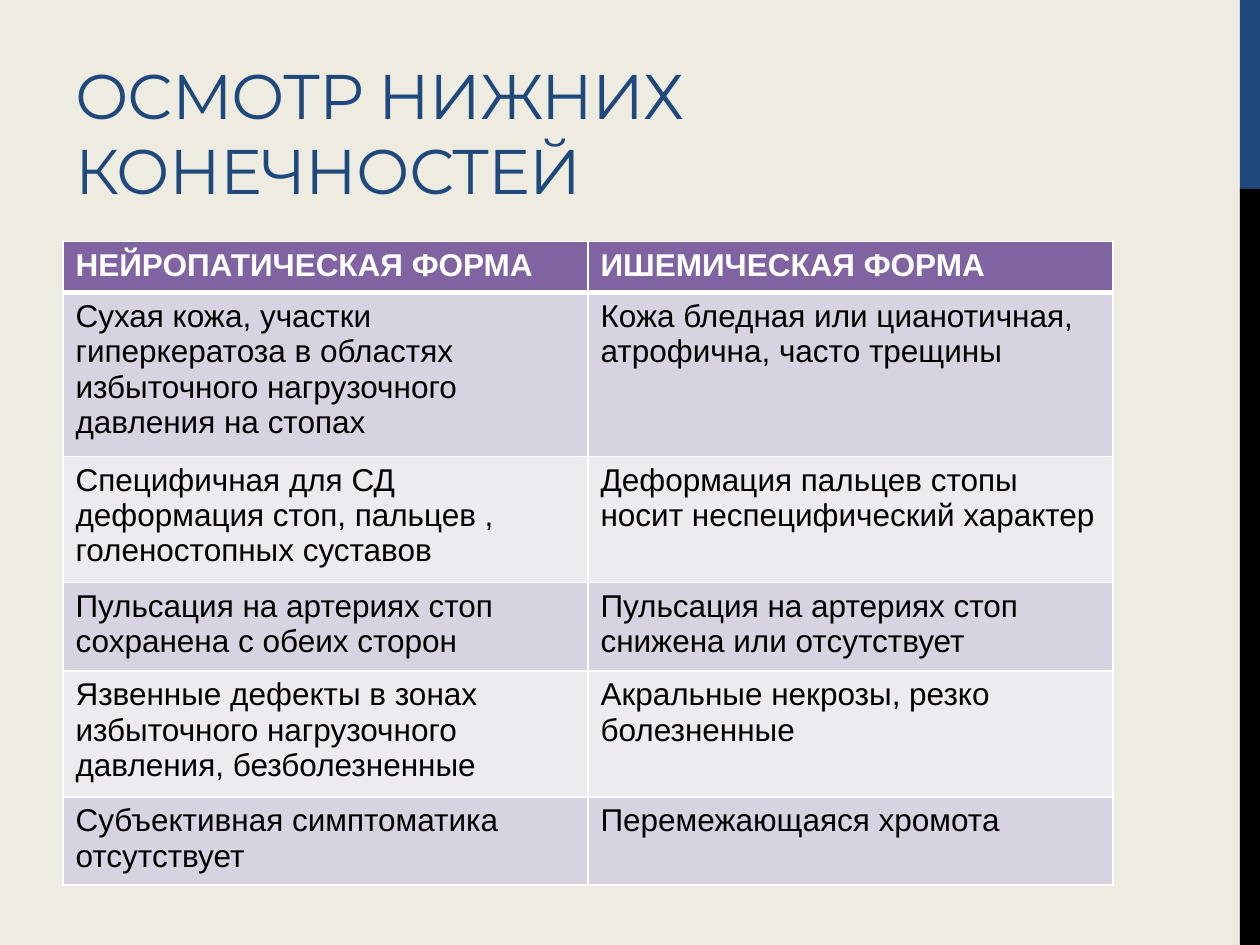
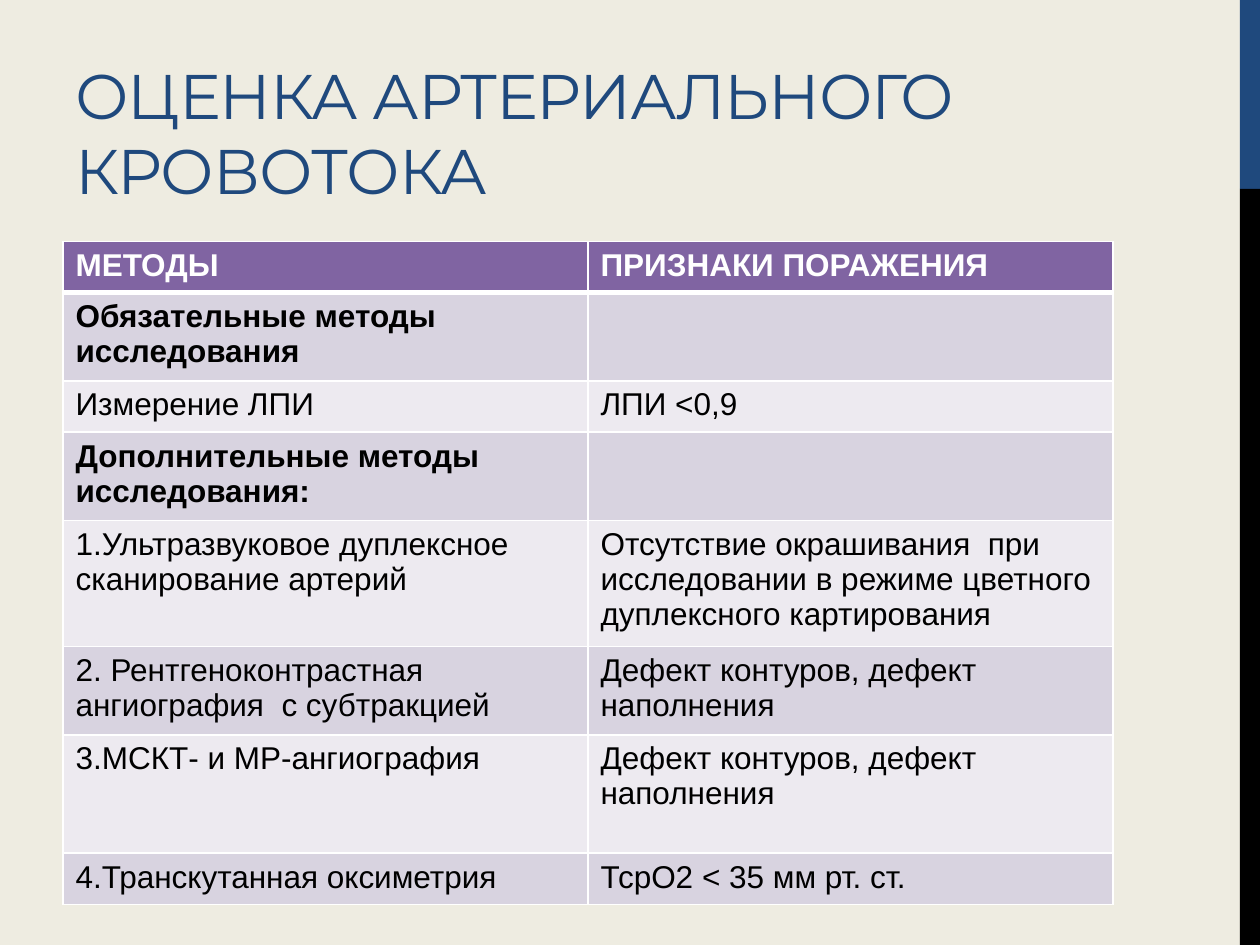
from dataclasses import dataclass

from lxml.etree import SubElement
from pptx import Presentation
from pptx.dml.color import RGBColor
from pptx.enum.shapes import MSO_SHAPE as Shape
from pptx.enum.text import MSO_ANCHOR as Anchor
from pptx.oxml.ns import qn
from pptx.util import Pt


@dataclass(frozen=True)
class Theme:
    background: str = "EEECE1"
    accent: str = "1F497D"
    band: str = "000000"
    header: str = "8064A2"
    row_fills: tuple = ("D8D3E0", "EDEAF0")
    border: str = "FFFFFF"
    header_text: str = "FFFFFF"
    body_text: str = "000000"
    title_font: str = "Montserrat"
    body_font: str = "Arial"
    title_size: float = 36
    body_size: float = 18
    title_spacing: float = -0.6
    thin_line: float = 1
    thick_line: float = 3


THEME = Theme()
SLIDE_WIDTH, SLIDE_HEIGHT = 720, 540
BAND_WIDTH, BAND_SPLIT = 11.5, 108
TITLE_BOX = (36, 12, 605, 108)
TABLE_BOX = (36, 138, 600)
ROW_MIN, LINE_HEIGHT, ROW_PADDING = 29.3, 20.15, 7.2

# Each table row: text lines it holds, left cell, right cell.
# A row with an empty right cell is a bold section heading.
EXAMINATION = [
    (1, "НЕЙРОПАТИЧЕСКАЯ ФОРМА", "ИШЕМИЧЕСКАЯ ФОРМА"),
    (4, "Сухая кожа, участки гиперкератоза в областях избыточного нагрузочного давления на стопах",
     "Кожа бледная или цианотичная, атрофична, часто трещины"),
    (3, "Специфичная для СД деформация стоп, пальцев , голеностопных суставов",
     "Деформация пальцев стопы носит неспецифический характер"),
    (2, "Пульсация на артериях стоп сохранена с обеих сторон",
     "Пульсация на артериях стоп снижена или отсутствует"),
    (3, "Язвенные дефекты в зонах избыточного нагрузочного давления, безболезненные",
     "Акральные некрозы, резко болезненные"),
    (2, "Субъективная симптоматика отсутствует", "Перемежающаяся хромота"),
]
BLOOD_FLOW = [
    (1, "МЕТОДЫ", "ПРИЗНАКИ ПОРАЖЕНИЯ"),
    (2, "Обязательные методы исследования", ""),
    (1, "Измерение ЛПИ", "ЛПИ <0,9"),
    (2, "Дополнительные методы исследования:", ""),
    (3, "1.Ультразвуковое дуплексное сканирование артерий",
     "Отсутствие окрашивания  при исследовании в режиме цветного дуплексного картирования"),
    (2, "2. Рентгеноконтрастная ангиография  с субтракцией",
     "Дефект контуров, дефект наполнения"),
    (3, "3.МСКТ- и МР-ангиография", "Дефект контуров, дефект наполнения"),
    (1, "4.Транскутанная оксиметрия", "ТсрО2 < 35 мм рт. ст."),
]


def color(value):
    return RGBColor.from_string(value)


def fill_solid(fill, value):
    fill.solid()
    fill.fore_color.rgb = color(value)


def add_run(paragraph, text, font, size, text_color, bold=False):
    run = paragraph.add_run()
    run.text = text
    run.font.name = font
    run.font.size = Pt(size)
    run.font.bold = bold
    run.font.color.rgb = color(text_color)
    return run


def add_side_band(slide, left, width):
    sections = ((0, BAND_SPLIT, THEME.accent),
                (BAND_SPLIT, SLIDE_HEIGHT - BAND_SPLIT, THEME.band))
    for top, height, section_color in sections:
        shape = slide.shapes.add_shape(
            Shape.RECTANGLE, Pt(left), Pt(top), Pt(width), Pt(height))
        shape.shadow.inherit = False
        fill_solid(shape.fill, section_color)
        shape.line.fill.background()


def add_title(slide, text, box):
    frame = slide.shapes.add_textbox(*map(Pt, box)).text_frame
    frame.word_wrap = True
    frame.vertical_anchor = Anchor.BOTTOM
    frame.margin_bottom = Pt(1.5)
    run = add_run(frame.paragraphs[0], text, THEME.title_font,
                  THEME.title_size, THEME.accent)
    properties = run._r.get_or_add_rPr()
    properties.set("spc", str(round(THEME.title_spacing * 100)))


def set_borders(cell, top, bottom):
    """Draw all four cell edges; the side edges are thin."""
    properties = cell._tc.get_or_add_tcPr()
    widths = {"a:lnL": THEME.thin_line, "a:lnR": THEME.thin_line,
              "a:lnT": top, "a:lnB": bottom}
    for tag, width in widths.items():
        line = SubElement(properties, qn(tag), w=str(int(Pt(width))))
        fill = SubElement(line, qn("a:solidFill"))
        SubElement(fill, qn("a:srgbClr"), val=THEME.border)


def style_cell(cell, text, row_index, is_section):
    is_header = row_index == 0
    set_borders(cell,
                THEME.thick_line if row_index == 1 else THEME.thin_line,
                THEME.thick_line if is_header else THEME.thin_line)
    row_fill = THEME.row_fills[(row_index - 1) % 2]
    fill_solid(cell.fill, THEME.header if is_header else row_fill)
    if text:
        add_run(cell.text_frame.paragraphs[0], text, THEME.body_font,
                THEME.body_size,
                THEME.header_text if is_header else THEME.body_text,
                is_header or is_section)


def add_comparison_table(slide, rows, box):
    left, top, width = box
    heights = [max(ROW_MIN, ROW_PADDING + lines * LINE_HEIGHT)
               for lines, *_ in rows]
    table = slide.shapes.add_table(
        len(rows), 2, Pt(left), Pt(top), Pt(width), Pt(sum(heights))).table
    for column in table.columns:
        column.width = Pt(width / 2)
    for row_index, (_, *texts) in enumerate(rows):
        table.rows[row_index].height = Pt(heights[row_index])
        for column_index, text in enumerate(texts):
            style_cell(table.cell(row_index, column_index), text,
                       row_index, is_section=not texts[1])


def add_table_slide(presentation, title, rows):
    slide = presentation.slides.add_slide(presentation.slide_layouts[6])
    fill_solid(slide.background.fill, THEME.background)
    add_side_band(slide, SLIDE_WIDTH - BAND_WIDTH, BAND_WIDTH)
    add_title(slide, title, TITLE_BOX)
    add_comparison_table(slide, rows, TABLE_BOX)


def main():
    presentation = Presentation()
    presentation.slide_width = Pt(SLIDE_WIDTH)
    presentation.slide_height = Pt(SLIDE_HEIGHT)
    add_table_slide(presentation, "ОСМОТР НИЖНИХ КОНЕЧНОСТЕЙ", EXAMINATION)
    add_table_slide(presentation, "ОЦЕНКА АРТЕРИАЛЬНОГО КРОВОТОКА", BLOOD_FLOW)
    presentation.save("out.pptx")


if __name__ == "__main__":
    main()
